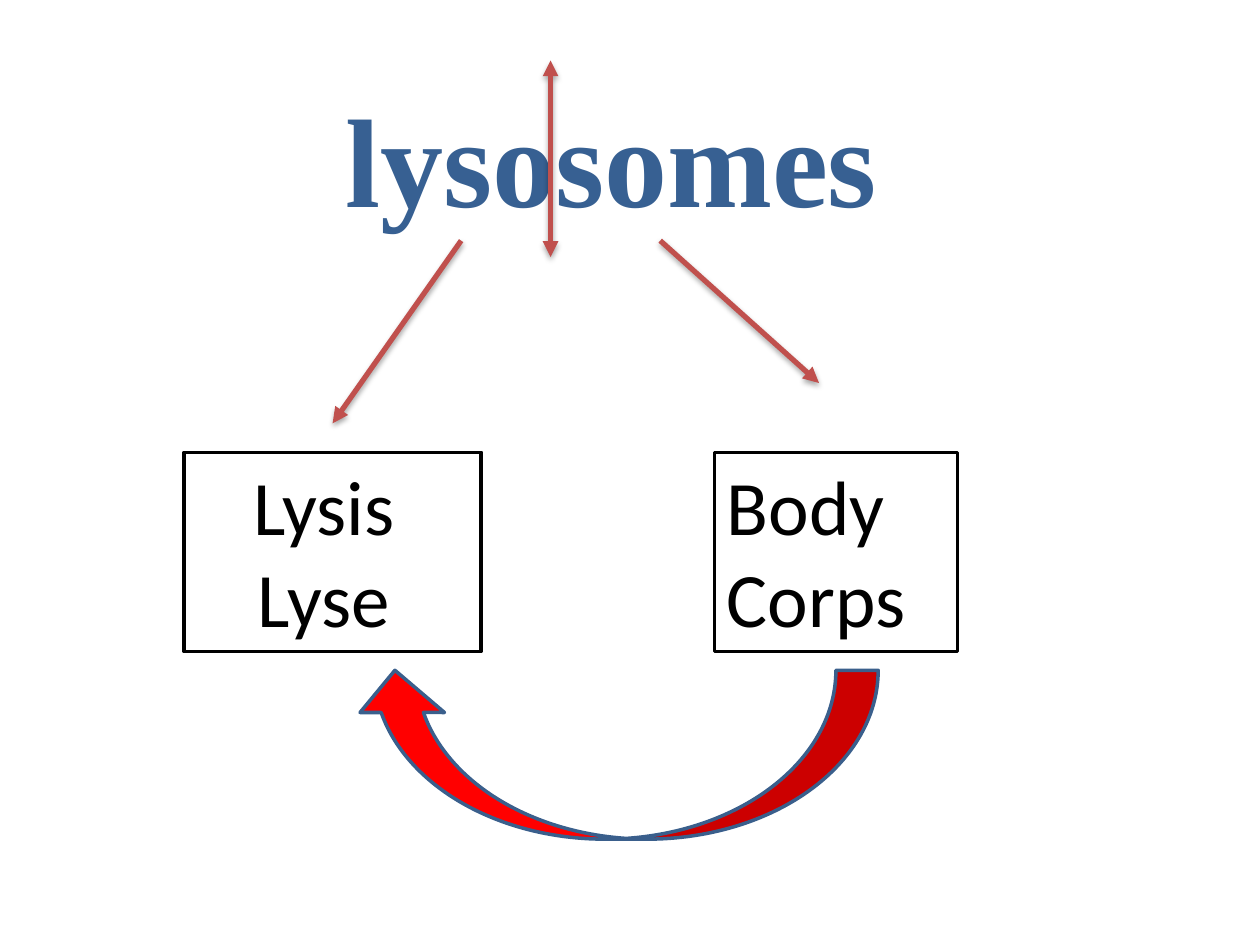
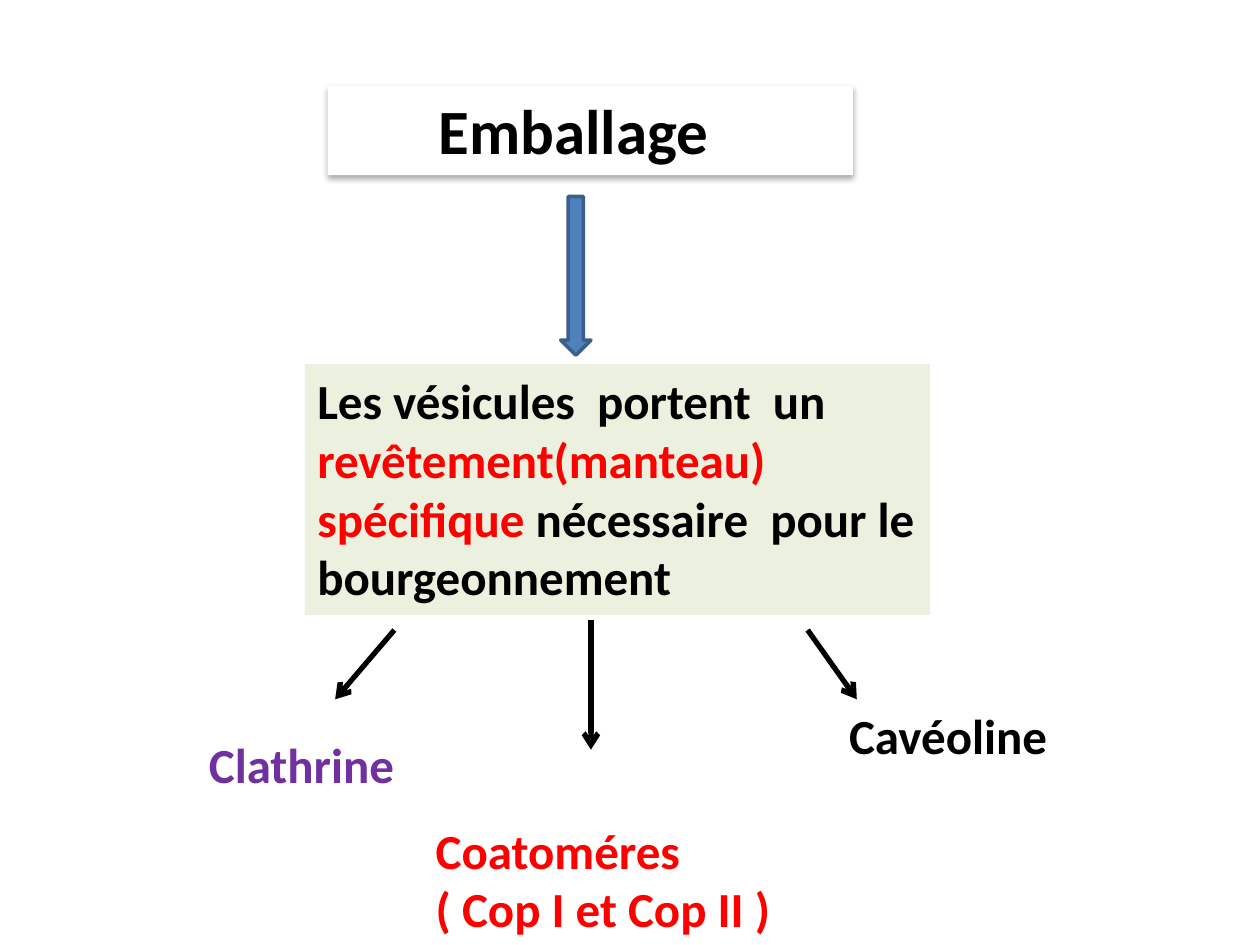
from dataclasses import dataclass
from typing import Optional

from pptx import Presentation
from pptx.dml.color import RGBColor
from pptx.enum.shapes import MSO_CONNECTOR, MSO_SHAPE
from pptx.enum.text import MSO_ANCHOR, MSO_AUTO_SIZE, PP_ALIGN
from pptx.oxml import parse_xml
from pptx.oxml.ns import nsdecls, qn
from pptx.util import Inches, Pt

# Shared colours and fonts
BLACK = RGBColor(0x00, 0x00, 0x00)
WHITE = RGBColor(0xFF, 0xFF, 0xFF)
RED = RGBColor(0xFF, 0x00, 0x00)
BRICK = RGBColor(0xC0, 0x50, 0x4D)
TITLE_BLUE = RGBColor(0x37, 0x60, 0x92)
ARROW_BLUE = RGBColor(0x4F, 0x81, 0xBD)
EDGE_BLUE = RGBColor(0x3A, 0x5F, 0x8C)
PALE_GREEN = RGBColor(0xEB, 0xF1, 0xDE)
PURPLE = RGBColor(0x70, 0x30, 0xA0)
BODY_FONT = "Calibri"
TITLE_FONT = "Times New Roman"

TITLE_ONLY = 5
SHADOW = (
    f'<a:outerShdw {nsdecls("a")} blurRad="40000" dist="23000" dir="5400000" '
    'rotWithShape="0"><a:srgbClr val="000000"><a:alpha val="35000"/>'
    "</a:srgbClr></a:outerShdw>"
)


@dataclass
class Run:
    text: str
    color: RGBColor = BLACK


@dataclass
class Style:
    size: float
    bold: bool = True
    font: str = BODY_FONT
    align: PP_ALIGN = PP_ALIGN.LEFT


@dataclass
class Box:
    left: float
    top: float
    width: float
    height: float
    paragraphs: list[list[Run]]
    style: Style
    fill: Optional[RGBColor] = None
    line: Optional[RGBColor] = None


@dataclass
class Arrow:
    start: tuple[float, float]
    end: tuple[float, float]
    color: RGBColor
    tail: str
    head: Optional[str] = None
    shadow: bool = False


def set_effects(sp, shadow: bool) -> None:
    """Replace the theme effect by a soft shadow, or by none."""
    sp_pr = sp._element.spPr
    effects = sp_pr.find(qn("a:effectLst"))
    if effects is None:
        effects = parse_xml(f'<a:effectLst {nsdecls("a")}/>')
        sp_pr.append(effects)
    if shadow:
        effects.append(parse_xml(SHADOW))


def place(sp, left: float, top: float, width: float, height: float) -> None:
    sp.left, sp.top = Inches(left), Inches(top)
    sp.width, sp.height = Inches(width), Inches(height)


def write(sp, paragraphs: list[list[Run]], style: Style) -> None:
    tf = sp.text_frame
    tf.word_wrap = True
    tf.auto_size = MSO_AUTO_SIZE.NONE
    tf.vertical_anchor = MSO_ANCHOR.TOP
    for i, runs in enumerate(paragraphs):
        p = tf.add_paragraph() if i else tf.paragraphs[0]
        p.alignment = style.align
        for run in runs:
            r = p.add_run()
            r.text = run.text
            r.font.name, r.font.size = style.font, Pt(style.size)
            r.font.bold = style.bold
            r.font.color.rgb = run.color


def add_titled_slide(prs, title: Box):
    s = prs.slides.add_slide(prs.slide_layouts[TITLE_ONLY])
    sp = s.shapes.title
    place(sp, title.left, title.top, title.width, title.height)
    write(sp, title.paragraphs, title.style)
    if title.fill is not None:
        sp.fill.solid()
        sp.fill.fore_color.rgb = title.fill
        set_effects(sp, shadow=True)
    return s


def add_shape(s, kind: MSO_SHAPE, left: float, top: float, width: float,
              height: float, fill: RGBColor, line: Optional[RGBColor]):
    sp = s.shapes.add_shape(kind, Inches(left), Inches(top), Inches(width), Inches(height))
    sp.shadow.inherit = False
    sp.fill.solid()
    sp.fill.fore_color.rgb = fill
    if line is None:
        sp.line.fill.background()
    else:
        sp.line.color.rgb = line
        sp.line.width = Pt(2)
    return sp


def add_box(s, box: Box) -> None:
    frame = box.left, box.top, box.width, box.height
    if box.fill is None:
        sp = s.shapes.add_textbox(*map(Inches, frame))
    else:
        sp = add_shape(s, MSO_SHAPE.RECTANGLE, *frame, box.fill, box.line)
    write(sp, box.paragraphs, box.style)


def add_arrow(s, arrow: Arrow) -> None:
    c = s.shapes.add_connector(
        MSO_CONNECTOR.STRAIGHT, *map(Inches, arrow.start + arrow.end))
    c.line.color.rgb = arrow.color
    c.line.width = Pt(3)
    ln = c.line._get_or_add_ln()
    for tag, kind in (("headEnd", arrow.head), ("tailEnd", arrow.tail)):
        if kind:
            ln.append(parse_xml(f'<a:{tag} {nsdecls("a")} type="{kind}"/>'))
    set_effects(c, arrow.shadow)


def build_lysosomes(prs) -> None:
    s = add_titled_slide(prs, Box(
        2.64, 0.6, 4.72, 1.31, [[Run("lysosomes", TITLE_BLUE)]],
        Style(72, font=TITLE_FONT)))

    # Split of the word into its two roots
    for start, end, head in (
        ((4.37, 0.48), (4.37, 2.04), "triangle"),
        ((3.66, 1.91), (2.64, 3.36), None),
        ((5.24, 1.91), (6.5, 3.04), None),
    ):
        add_arrow(s, Arrow(start, end, BRICK, "triangle", head, shadow=True))

    # Meaning of each root
    for left, width, words, align in (
        (1.46, 2.36, ("Lysis ", "Lyse "), PP_ALIGN.CENTER),
        (5.67, 1.93, ("Body", "Corps"), PP_ALIGN.LEFT),
    ):
        add_box(s, Box(left, 3.59, width, 1.58, [[Run(word)] for word in words],
                       Style(44, bold=False, align=align), WHITE, BLACK))

    # Return arrow from body to lysis
    sp = add_shape(s, MSO_SHAPE.CURVED_UP_ARROW, 2.8, 5.32, 4.17, 1.34, RED, EDGE_BLUE)
    sp._element.spPr.get_or_add_xfrm().set("flipH", "1")


def build_packaging(prs) -> None:
    s = add_titled_slide(prs, Box(
        2.6, 0.68, 4.17, 0.71, [[Run("Emballage")]], Style(36), WHITE))
    s.shapes.title.text_frame.margin_left = Inches(0.88)

    # Role of the coat
    style = Style(28)
    add_box(s, Box(2.42, 2.89, 4.96, 1.99, [[
        Run("Les vésicules  portent  un "),
        Run("revêtement(manteau) spécifique ", RED),
        Run("nécessaire  pour le bourgeonnement"),
    ]], style, PALE_GREEN))
    add_shape(s, MSO_SHAPE.DOWN_ARROW, 4.45, 1.56, 0.24, 1.26, ARROW_BLUE, EDGE_BLUE)

    # Coat proteins
    for left, top, width, height, lines, color in (
        (1.56, 5.78, 1.93, 0.57, ["Clathrine"], PURPLE),
        (3.36, 6.46, 2.99, 1.04, ["Coatoméres", "( Cop I et Cop II )"], RED),
        (6.64, 5.55, 1.89, 0.57, ["Cavéoline"], BLACK),
    ):
        add_box(s, Box(left, top, width, height,
                       [[Run(line, color)] for line in lines], style))

    # Arrows to the proteins
    for start, end in (
        ((3.13, 5), (2.66, 5.55)),
        ((4.69, 4.92), (4.69, 5.95)),
        ((6.41, 5), (6.8, 5.55)),
    ):
        add_arrow(s, Arrow(start, end, BLACK, "arrow"))


def main() -> None:
    prs = Presentation()
    prs.slide_width, prs.slide_height = Inches(10), Inches(7.5)
    build_lysosomes(prs)
    build_packaging(prs)
    prs.save("out.pptx")


if __name__ == "__main__":
    main()
